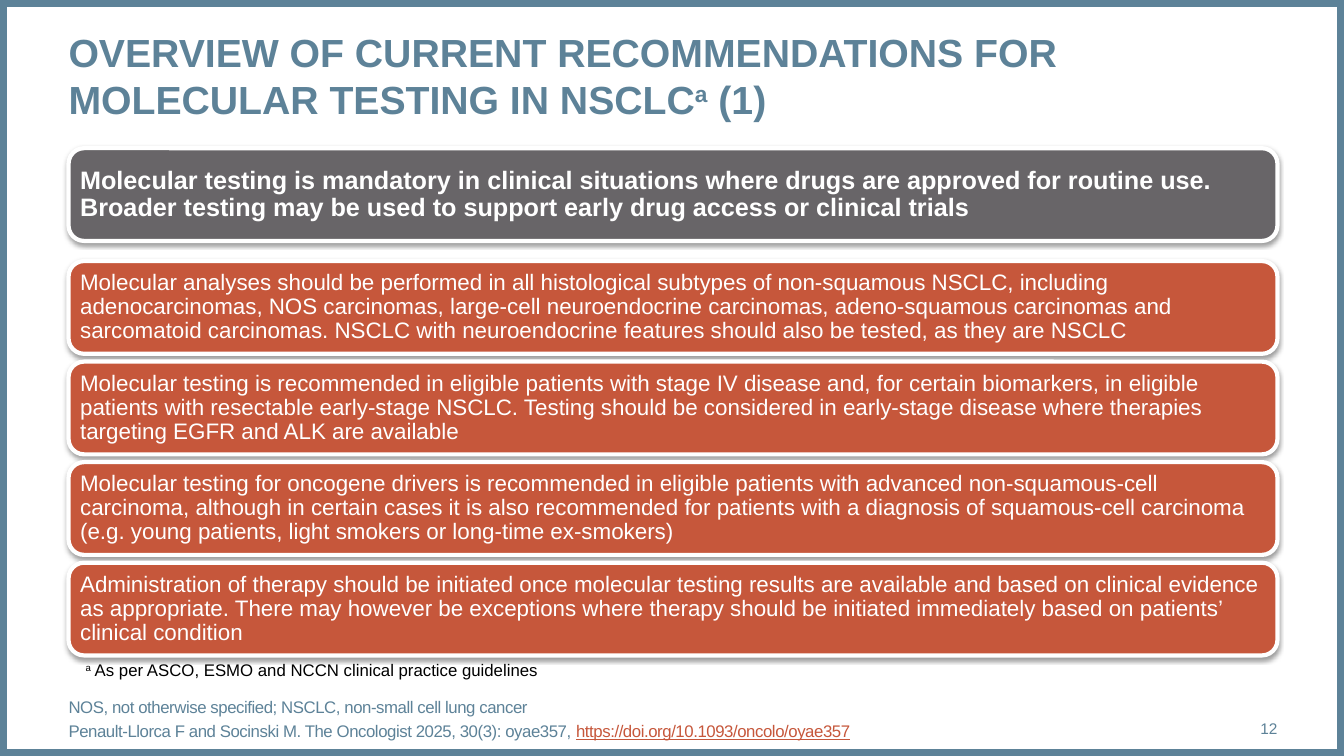
from lxml.etree import SubElement
from pptx import Presentation
from pptx.dml.color import RGBColor
from pptx.enum.shapes import MSO_SHAPE
from pptx.enum.text import MSO_ANCHOR, PP_ALIGN
from pptx.oxml.ns import qn
from pptx.util import Inches, Pt

WIDE, HIGH = Inches(13.33), Inches(7.5)
LEFT, SPAN = 5.1, 89.95
CARD = 12.27
TOP, STEP = 34.53, 13.3

BLUE = RGBColor(0x5D, 0x82, 0x98)
GREY = RGBColor(0x68, 0x65, 0x68)
RUST = RGBColor(0xC6, 0x57, 0x3B)
WHITE = RGBColor(0xFF, 0xFF, 0xFF)
BLACK = RGBColor(0, 0, 0)

LEAD = (
    "Molecular testing is mandatory in clinical situations where drugs are approved "
    "for routine use. Broader testing may be used to support early drug access or "
    "clinical trials"
)
POINTS = [
    "Molecular analyses should be performed in all histological subtypes of "
    "non-squamous NSCLC, including adenocarcinomas, NOS carcinomas, large-cell "
    "neuroendocrine carcinomas, adeno-squamous carcinomas and sarcomatoid carcinomas. "
    "NSCLC with neuroendocrine features should also be tested, as they are NSCLC",
    "Molecular testing is recommended in eligible patients with stage IV disease and, "
    "for certain biomarkers, in eligible patients with resectable early-stage NSCLC. "
    "Testing should be considered in early-stage disease where therapies targeting "
    "EGFR and ALK are available",
    "Molecular testing for oncogene drivers is recommended in eligible patients with "
    "advanced non-squamous-cell carcinoma, although in certain cases it is also "
    "recommended for patients with a diagnosis of squamous-cell carcinoma (e.g. young "
    "patients, light smokers or long-time ex-smokers)",
    "Administration of therapy should be initiated once molecular testing results are "
    "available and based on clinical evidence as appropriate. There may however be "
    "exceptions where therapy should be initiated immediately based on patients’ "
    "clinical condition",
]


def place(left, top, wide, high):
    return [int(part * side / 100) for part, side in
            zip((left, top, wide, high), (WIDE, HIGH, WIDE, HIGH))]


def style(para, size, color, bold=False):
    para.font.name = "Arial"
    para.font.size = Pt(size)
    para.font.bold = bold
    para.font.color.rgb = color


def inset(frame, size):
    frame.margin_left = frame.margin_right = Inches(size)
    frame.margin_top = frame.margin_bottom = Inches(size)


def add_run(para, text, **marks):
    run = para.add_run()
    run.text = text
    for name, value in marks.items():
        run._r.get_or_add_rPr().set(name, str(value))
    return run


def add_box(slide, spot, anchor=MSO_ANCHOR.TOP):
    frame = slide.shapes.add_textbox(*place(*spot)).text_frame
    frame.word_wrap = True
    frame.vertical_anchor = anchor
    inset(frame, 0)
    return frame


def add_frame(slide):
    shape = slide.shapes.add_shape(MSO_SHAPE.RECTANGLE, 0, 0, WIDE, HIGH)
    shape.shadow.inherit = False
    shape.fill.background()
    shape.line.color.rgb = BLUE
    shape.line.width = Pt(10)


def add_shade(shape):
    shape.shadow.inherit = False
    effects = shape._element.spPr.find(qn("a:effectLst"))
    shade = SubElement(effects, qn("a:outerShdw"), blurRad=str(Pt(3.1)),
                       dist=str(Pt(1.6)), dir="5400000", rotWithShape="0")
    color = SubElement(shade, qn("a:srgbClr"), val="000000")
    SubElement(color, qn("a:alpha"), val="38000")


def add_card(slide, top, text, fill, size, bold=False):
    shape = slide.shapes.add_shape(MSO_SHAPE.ROUNDED_RECTANGLE,
                                   *place(LEFT, top, SPAN, CARD))
    shape.fill.solid()
    shape.fill.fore_color.rgb = fill
    shape.line.color.rgb = WHITE
    shape.line.width = Pt(3)
    add_shade(shape)
    frame = shape.text_frame
    frame.word_wrap = True
    frame.vertical_anchor = MSO_ANCHOR.MIDDLE
    inset(frame, 0.07)
    para = frame.paragraphs[0]
    para.alignment = PP_ALIGN.LEFT
    para.line_spacing = 0.9
    style(para, size, WHITE, bold)
    add_run(para, text)


def add_title(slide):
    para = add_box(slide, (LEFT, 3.73, SPAN, 12.53)).paragraphs[0]
    style(para, 28, BLUE, True)
    add_run(para, "OVERVIEW OF CURRENT RECOMMENDATIONS FOR MOLECULAR TESTING IN NSCLC")
    add_run(para, "a", baseline=30000)
    add_run(para, " (1)")


def add_note(slide):
    frame = add_box(slide, (5.63, 86.67, 35.48, 4))
    frame.word_wrap = False
    frame.margin_left = Inches(0.1)
    frame.margin_top = Inches(0.05)
    para = frame.paragraphs[0]
    style(para, 12, BLACK)
    add_run(para, "a", baseline=30000)
    add_run(para, " As per ASCO, ESMO and NCCN clinical practice guidelines")


def add_source(slide):
    frame = add_box(slide, (LEFT, 92.67, 83.5, 5.33), MSO_ANCHOR.BOTTOM)
    terms, cite = frame.paragraphs[0], frame.add_paragraph()
    cite.space_before = Pt(3)
    for para in (terms, cite):
        style(para, 12, BLUE)
    add_run(terms, "NOS, not otherwise specified; NSCLC, non-small cell lung cancer", spc=-30)
    add_run(cite, "Penault-Llorca F and Socinski M. The Oncologist 2025, 30(3): oyae357, ",
            spc=-30)
    link = add_run(cite, "https://doi.org/10.1093/oncolo/oyae357", spc=-30)
    link.font.color.rgb = RUST
    link.font.underline = True


def add_number(slide):
    para = add_box(slide, (88.6, 93.73, 6.45, 5.33), MSO_ANCHOR.MIDDLE).paragraphs[0]
    para.alignment = PP_ALIGN.RIGHT
    style(para, 11, BLUE)
    add_run(para, "12")


def main():
    deck = Presentation()
    deck.slide_width, deck.slide_height = WIDE, HIGH
    slide = deck.slides.add_slide(deck.slide_layouts[6])
    add_frame(slide)
    add_card(slide, 19.6, LEAD, GREY, 18, True)
    for row, text in enumerate(POINTS):
        add_card(slide, TOP + row * STEP, text, RUST, 16)
    add_title(slide)
    add_number(slide)
    add_source(slide)
    add_note(slide)
    deck.save("out.pptx")


if __name__ == "__main__":
    main()
